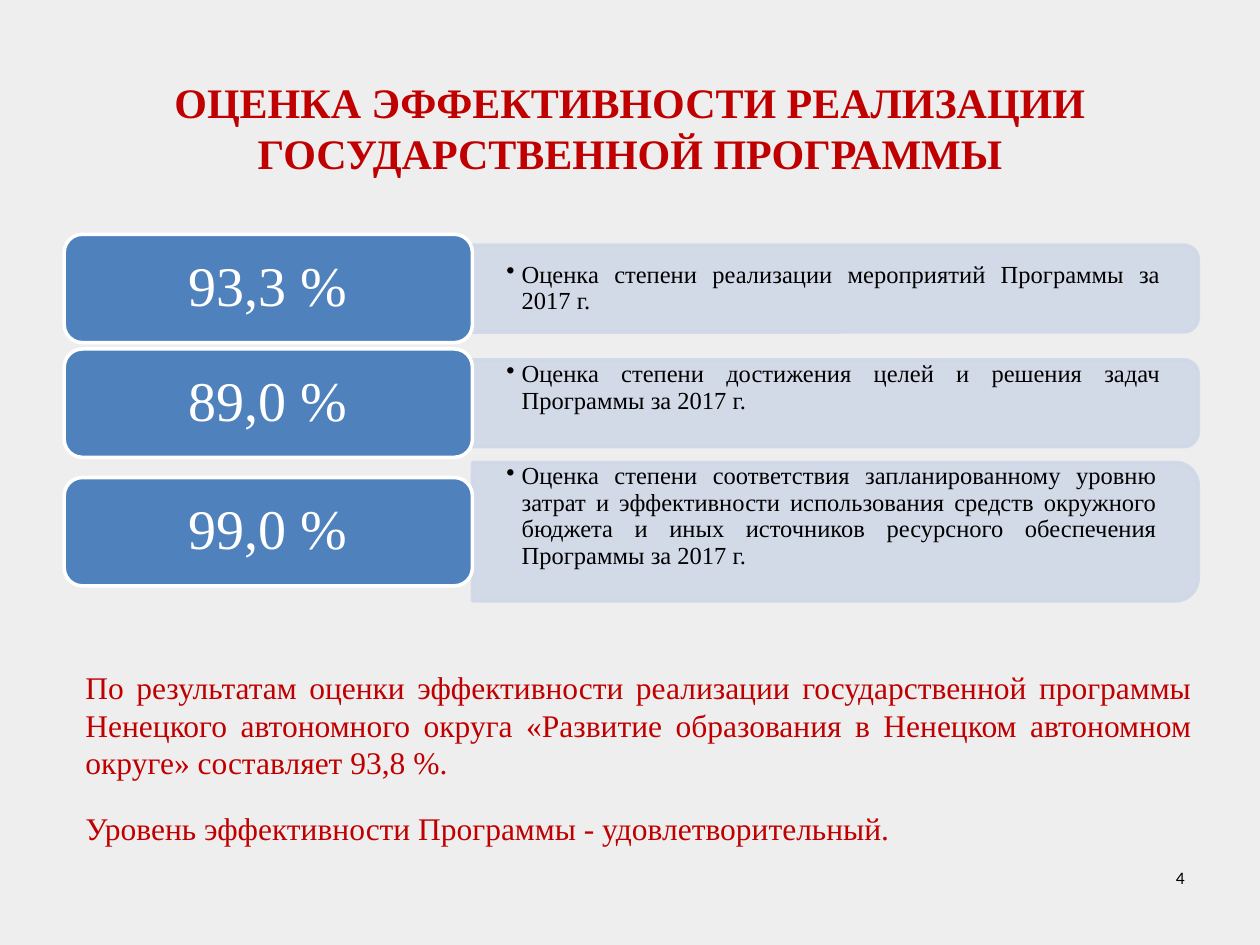
import pptx
import pptx.util
import pptx.dml.color
import pptx.enum.shapes
import pptx.enum.text
import pptx.oxml
import pptx.oxml.ns
from pptx.util import Inches

ALIGN = pptx.enum.text.PP_ALIGN
ANCHOR = pptx.enum.text.MSO_ANCHOR
SHAPE = pptx.enum.shapes.MSO_SHAPE
RED = "C00000"
PANEL = "D0D8E8"
SERIF = "Times New Roman"


def color(hex_string):
    return pptx.dml.color.RGBColor.from_string(hex_string)


def write(shape, text, size, hex_string, align, font=SERIF, bold=False):
    """Fill the first paragraph of a shape with one formatted run."""
    shape.text_frame.word_wrap = True
    paragraph = shape.text_frame.paragraphs[0]
    paragraph.alignment = align
    run = paragraph.add_run()
    run.text = text
    run.font.size = pptx.util.Pt(size)
    run.font.name = font
    run.font.bold = bold
    run.font.color.rgb = color(hex_string)
    return paragraph


presentation = pptx.Presentation()
presentation.slide_width = Inches(10)
presentation.slide_height = Inches(7.5)
slide = presentation.slides.add_slide(presentation.slide_layouts[5])
slide.background.fill.solid()
slide.background.fill.fore_color.rgb = color("EEEEEE")

title = slide.shapes.title
title.left, title.top = Inches(0.5), Inches(0.39)
title.width, title.height = Inches(9), Inches(1.07)
title.text_frame.vertical_anchor = ANCHOR.BOTTOM
write(title, "ОЦЕНКА ЭФФЕКТИВНОСТИ РЕАЛИЗАЦИИ ГОСУДАРСТВЕННОЙ ПРОГРАММЫ",
      24, RED, ALIGN.CENTER, bold=True)

# Row centre, panel height, text centre, text width, value, description
rows = [
    (2.29, 0.69, 2.29, 5.73, "93,3 %",
     "Оценка степени реализации мероприятий Программы за 2017 г."),
    (3.2, 0.69, 3.08, 5.73, "89,0 %",
     "Оценка степени достижения целей и решения задач Программы за 2017 г."),
    (4.22, 1.1, 4.1, 5.7, "99,0 %",
     "Оценка степени соответствия запланированному уровню затрат и "
     "эффективности использования средств окружного бюджета и иных "
     "источников ресурсного обеспечения Программы за 2017 г."),
]
panel_length, panel_center = 5.76, 6.63
badge_height = 0.86

for center, panel_height, text_center, text_width, value, description in rows:
    # The panel is turned a quarter so that its rounded end faces right
    panel = slide.shapes.add_shape(
        SHAPE.ROUND_2_SAME_RECTANGLE,
        Inches(panel_center - panel_height / 2), Inches(center - panel_length / 2),
        Inches(panel_height), Inches(panel_length))
    panel.rotation = 90
    panel.shadow.inherit = False
    panel.fill.solid()
    panel.fill.fore_color.rgb = color(PANEL)
    panel.line.color.rgb = color(PANEL)
    panel.line.width = pptx.util.Pt(2)
    for fill_color in panel.element.spPr.iter(pptx.oxml.ns.qn("a:srgbClr")):
        alpha = fill_color.makeelement(pptx.oxml.ns.qn("a:alpha"), {"val": "90000"})
        fill_color.append(alpha)

    text_height = panel_height - 0.08
    text_box = slide.shapes.add_textbox(
        Inches(3.75), Inches(text_center - text_height / 2),
        Inches(text_width), Inches(text_height))
    frame = text_box.text_frame
    frame.vertical_anchor = ANCHOR.MIDDLE
    frame.margin_left = frame.margin_right = Inches(0.27)
    frame.margin_top = frame.margin_bottom = 0
    paragraph = write(text_box, description, 14, "000000", ALIGN.JUSTIFY)
    paragraph.line_spacing = 0.9
    properties = paragraph._p.get_or_add_pPr()
    properties.set("marL", str(Inches(0.12)))
    properties.set("indent", str(-Inches(0.12)))
    bullet = properties.makeelement(pptx.oxml.ns.qn("a:buChar"), {"char": "•"})
    properties.append(bullet)

    badge = slide.shapes.add_shape(
        SHAPE.ROUNDED_RECTANGLE, Inches(0.51), Inches(center - badge_height / 2),
        Inches(3.24), Inches(badge_height))
    badge.shadow.inherit = False
    badge.fill.solid()
    badge.fill.fore_color.rgb = color("4F81BD")
    badge.line.color.rgb = color("FFFFFF")
    badge.line.width = pptx.util.Pt(2)
    badge.text_frame.vertical_anchor = ANCHOR.MIDDLE
    write(badge, value, 32, "FFFFFF", ALIGN.CENTER).line_spacing = 0.9

notes = [
    (0.58, 5.25, 8.98, 1.01, 18, RED, ALIGN.JUSTIFY, SERIF,
     "По результатам оценки эффективности реализации государственной программы "
     "Ненецкого автономного округа «Развитие образования в Ненецком автономном "
     "округе» составляет 93,8 %."),
    (0.58, 6.37, 8.82, 0.4, 18, RED, ALIGN.LEFT, SERIF,
     "Уровень эффективности Программы - удовлетворительный."),
    (7.17, 6.83, 2.33, 0.52, 10, "000000", ALIGN.RIGHT, "Calibri", "4"),
]
for left, top, width, height, size, hex_string, align, font, text in notes:
    text_box = slide.shapes.add_textbox(
        Inches(left), Inches(top), Inches(width), Inches(height))
    write(text_box, text, size, hex_string, align, font)

presentation.save("out.pptx")
